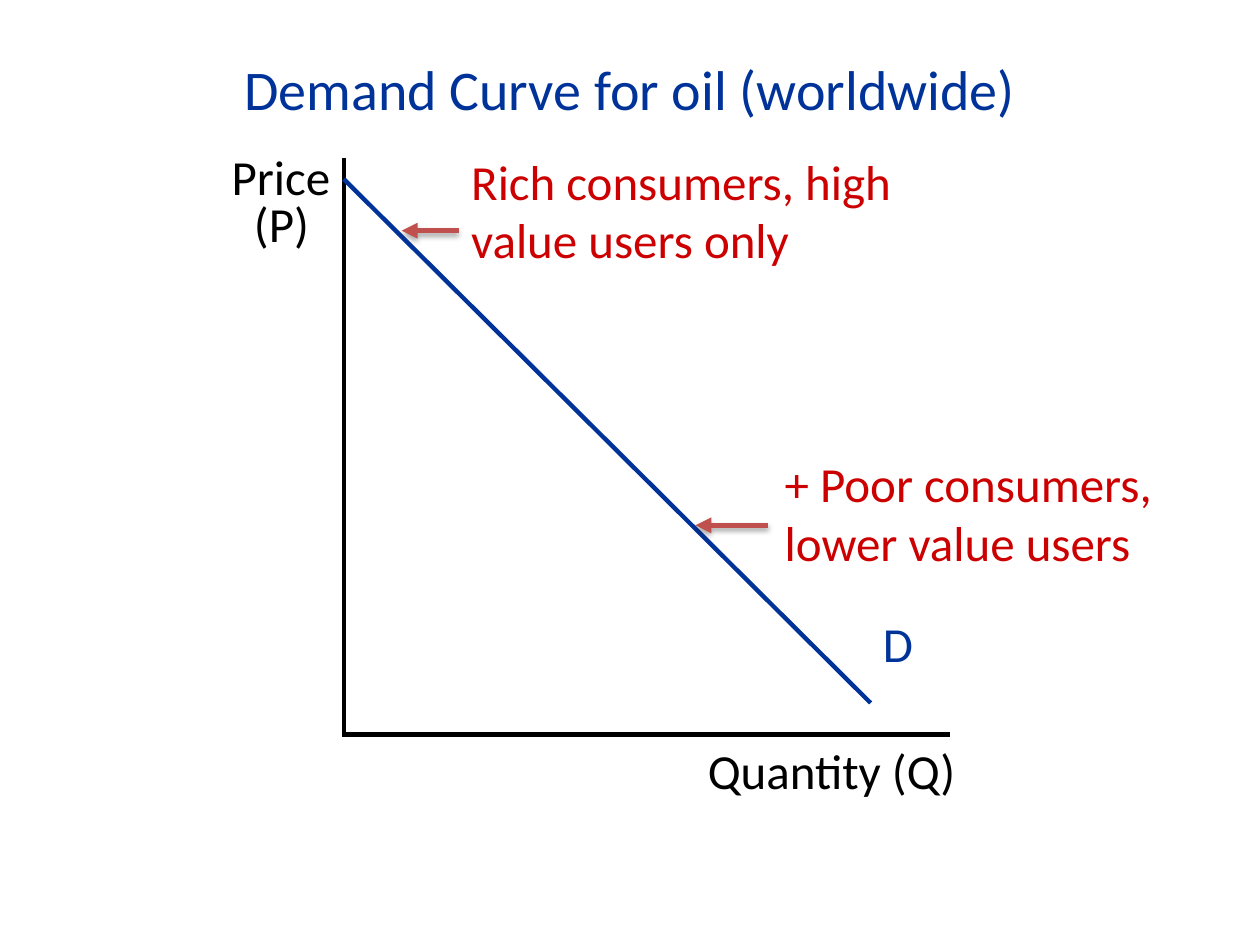
from dataclasses import dataclass

from lxml import etree
from pptx import Presentation
from pptx.dml.color import RGBColor
from pptx.enum.shapes import MSO_CONNECTOR
from pptx.enum.text import MSO_ANCHOR, MSO_AUTO_SIZE, PP_ALIGN
from pptx.oxml import parse_xml
from pptx.oxml.ns import nsdecls, qn
from pptx.util import Cm, Pt

STRAIGHT = MSO_CONNECTOR.STRAIGHT
FIT_SHAPE = MSO_AUTO_SIZE.SHAPE_TO_FIT_TEXT
TOP, MIDDLE = MSO_ANCHOR.TOP, MSO_ANCHOR.MIDDLE
LEFT, CENTER = PP_ALIGN.LEFT, PP_ALIGN.CENTER

FONT = "Calibri"
BLACK, BLUE, RED, ARROW_RED = "000000", "003399", "CC0000", "C0504D"
TITLE_ONLY = 5
AXIS_X = 6.93
AXIS_Y = 14.81

SHADOW = (
    f'<a:effectLst {nsdecls("a")}>'
    '<a:outerShdw blurRad="40000" dist="23000" dir="5400000" rotWithShape="0">'
    '<a:srgbClr val="000000"><a:alpha val="35000"/></a:srgbClr>'
    "</a:outerShdw></a:effectLst>"
)


@dataclass
class Label:
    """A text box; lengths in centimetres."""
    lines: tuple[str, ...]
    left: float
    top: float
    width: float
    height: float
    color: str
    spacing: float = 1.0
    last_indent: float = 0.0


@dataclass
class Line:
    """A straight line from start to end; lengths in centimetres."""
    start: tuple[float, float]
    end: tuple[float, float]
    color: str
    weight: float = 2.5
    arrow: bool = False


LINES = (
    Line((AXIS_X, 3.18), (AXIS_X, 14.86), BLACK),
    Line((AXIS_X, AXIS_Y), (19.15, AXIS_Y), BLACK),
    Line((AXIS_X, 3.61), (17.55, 14.17), BLUE),
    Line((9.25, 4.65), (8.1, 4.65), ARROW_RED, 3, True),
    Line((15.49, 10.59), (14.02, 10.59), ARROW_RED, 3, True),
)
LABELS = (
    Label(("D",), 17.55, 12.24, 1.47, 1.45, BLUE),
    Label(("Quantity (Q)",), 14.02, AXIS_Y, 8.28, 1.45, BLACK),
    Label(("Price", "(P)"), 4.42, 3.05, 2.69, 2.18, BLACK, 0.8, 0.45),
    Label(("Rich consumers, high value users only",), 9.25, 2.92, 9.53, 2.64, RED),
    Label(("+ Poor consumers, lower value users",), 15.57, 9.02, 8.28, 2.64, RED),
)


def rgb(color: str) -> RGBColor:
    return RGBColor.from_string(color)


def place(shape, left: float, top: float, width: float, height: float) -> None:
    shape.left, shape.top = Cm(left), Cm(top)
    shape.width, shape.height = Cm(width), Cm(height)


def write(frame, lines: tuple[str, ...], *, size: float, color: str,
          align=LEFT, anchor=TOP, spacing: float = 1.0) -> None:
    frame.word_wrap = True
    frame.auto_size = FIT_SHAPE
    frame.vertical_anchor = anchor
    for index, text in enumerate(lines):
        para = frame.add_paragraph() if index else frame.paragraphs[0]
        para.alignment = align
        para.line_spacing = spacing
        span = para.add_run()
        span.text = text
        span.font.name = FONT
        span.font.size = Pt(size)
        span.font.color.rgb = rgb(color)


def draw_label(page, label: Label) -> None:
    box = page.shapes.add_textbox(0, 0, 0, 0)
    write(box.text_frame, label.lines, size=28, color=label.color,
          spacing=label.spacing)
    place(box, label.left, label.top, label.width, label.height)
    if label.last_indent:
        last = box.text_frame.paragraphs[-1]
        last._p.get_or_add_pPr().set("marL", str(Cm(label.last_indent)))


def draw_line(page, line: Line) -> None:
    ends = [Cm(value) for value in (*line.start, *line.end)]
    connector = page.shapes.add_connector(STRAIGHT, *ends)
    connector.line.color.rgb = rgb(line.color)
    connector.line.width = Pt(line.weight)
    properties = connector._element.spPr
    if line.arrow:
        outline = connector.line._get_or_add_ln()
        etree.SubElement(outline, qn("a:tailEnd"), type="triangle")
        properties.append(parse_xml(SHADOW))
    else:
        etree.SubElement(properties, qn("a:effectLst"))


def main() -> None:
    deck = Presentation()
    deck.slide_width, deck.slide_height = Cm(25.4), Cm(19.05)
    page = deck.slides.add_slide(deck.slide_layouts[TITLE_ONLY])
    title = page.shapes.title
    write(title.text_frame, ("Demand Curve for oil (worldwide)",), size=32,
          color=BLUE, align=CENTER, anchor=MIDDLE)
    place(title, 1.78, 0.97, 21.84, 1.63)
    for line in LINES:
        draw_line(page, line)
    for label in LABELS:
        draw_label(page, label)
    deck.save("out.pptx")


if __name__ == "__main__":
    main()
